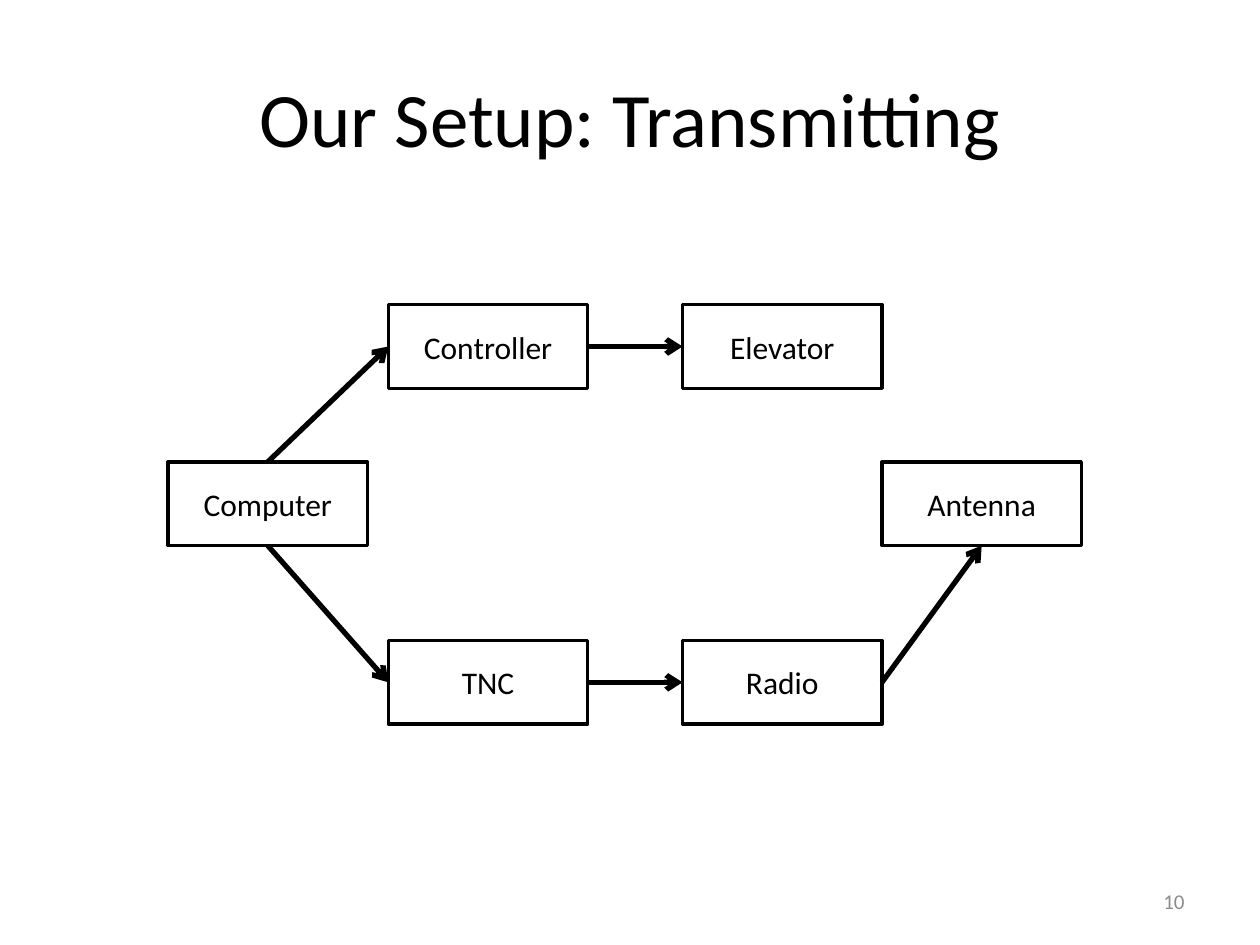
"""Builds the slide that shows the transmitting setup as a flow of boxes."""
from pptx import Presentation
from pptx.dml.color import RGBColor
from pptx.enum.shapes import MSO_CONNECTOR, MSO_SHAPE
from pptx.enum.text import MSO_ANCHOR, PP_ALIGN
from pptx.oxml.ns import qn
from pptx.util import Cm, Pt
from lxml import etree

RECT = MSO_SHAPE.RECTANGLE
LINE = MSO_CONNECTOR.STRAIGHT
MIDDLE = MSO_ANCHOR.MIDDLE
CENTER, RIGHT = PP_ALIGN.CENTER, PP_ALIGN.RIGHT
TOP, LEFT, BOTTOM, EAST = range(4)


def paint(color, shade):
    color.rgb = RGBColor.from_string(shade)


def write(shape, text, size, align=CENTER, shade="000000"):
    frame = shape.text_frame
    frame.word_wrap = True
    frame.vertical_anchor = MIDDLE
    para = frame.paragraphs[0]
    para.alignment = align
    run = para.add_run()
    run.text = text
    run.font.name = "Calibri"
    run.font.size = Pt(size)
    paint(run.font.color, shade)


deck = Presentation()
deck.slide_width, deck.slide_height = Cm(25.4), Cm(19.05)
slide = deck.slides.add_slide(deck.slide_layouts[5])
shapes = slide.shapes

title = shapes.title
title.left, title.top = Cm(1.27), Cm(0.76)
title.width, title.height = Cm(22.86), Cm(3.18)
write(title, "Our Setup: Transmitting", 44)

number = shapes.add_textbox(Cm(18.2), Cm(17.66), Cm(5.93), Cm(1.01))
write(number, "10", 12, RIGHT, "8C8C8C")

upper, center, lower = 6.14, 9.31, 12.91
inner, outer = 7.83, 13.76
places = [
    ("Computer", 3.39, center),
    ("Controller", inner, upper),
    ("Elevator", outer, upper),
    ("Antenna", 17.78, center),
    ("TNC", inner, lower),
    ("Radio", outer, lower),
]
boxes = {}
for name, left, top in places:
    box = shapes.add_shape(RECT, Cm(left), Cm(top), Cm(4.02), Cm(1.69))
    box.shadow.inherit = False
    box.fill.background()
    paint(box.line.color, "000000")
    box.line.width = Pt(2)
    write(box, name, 18)
    boxes[name] = box

links = [
    ("Computer", TOP, "Controller", LEFT),
    ("Computer", BOTTOM, "TNC", LEFT),
    ("Controller", EAST, "Elevator", LEFT),
    ("TNC", EAST, "Radio", LEFT),
    ("Radio", EAST, "Antenna", BOTTOM),
]
for start, exit, end, entry in links:
    arrow = shapes.add_connector(LINE, 0, 0, 0, 0)
    arrow.begin_connect(boxes[start], exit)
    arrow.end_connect(boxes[end], entry)
    paint(arrow.line.color, "000000")
    arrow.line.width = Pt(3)
    props = arrow._element.spPr
    etree.SubElement(props.find(qn("a:ln")), qn("a:tailEnd"), type="arrow")
    etree.SubElement(props, qn("a:effectLst"))

deck.save("out.pptx")
